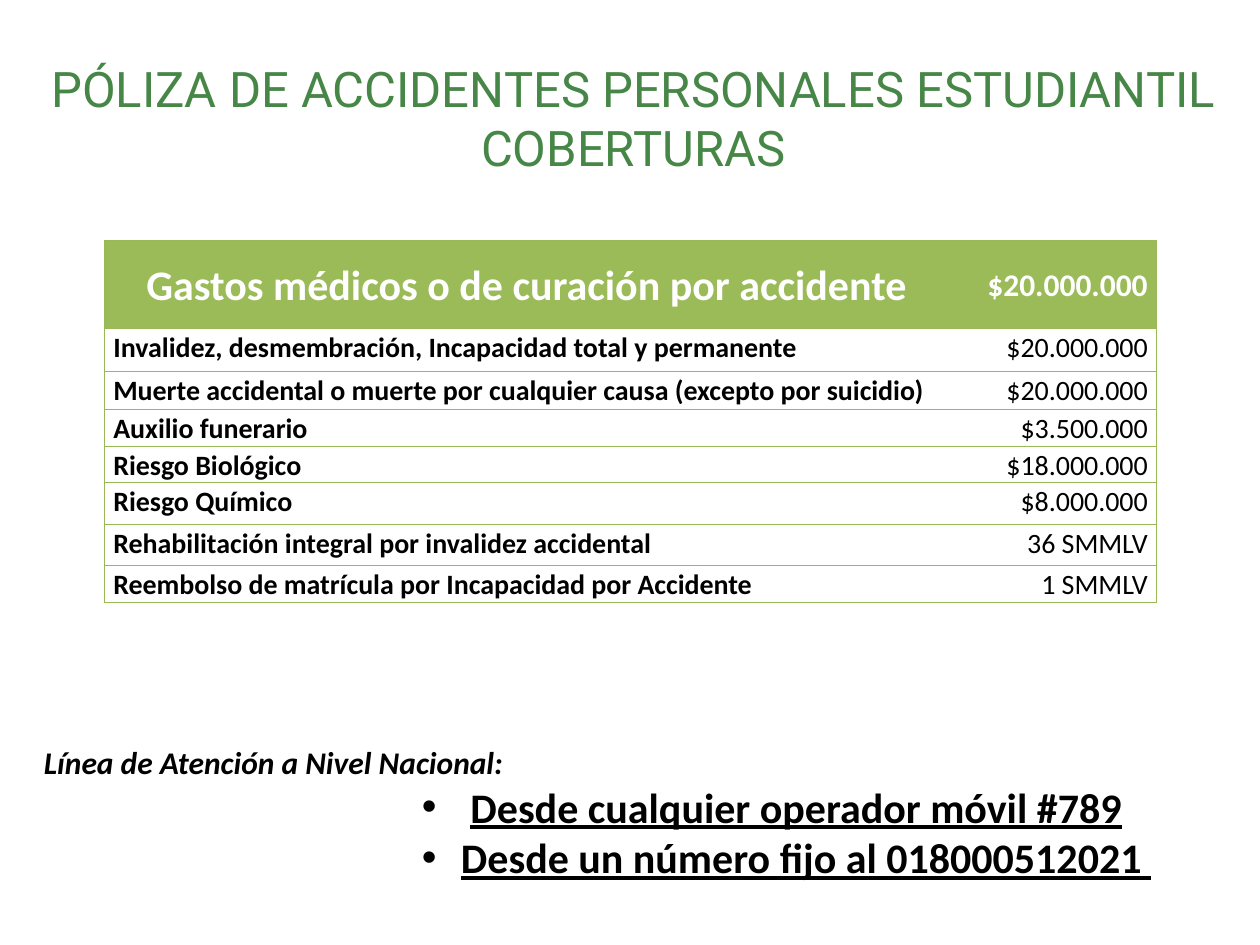
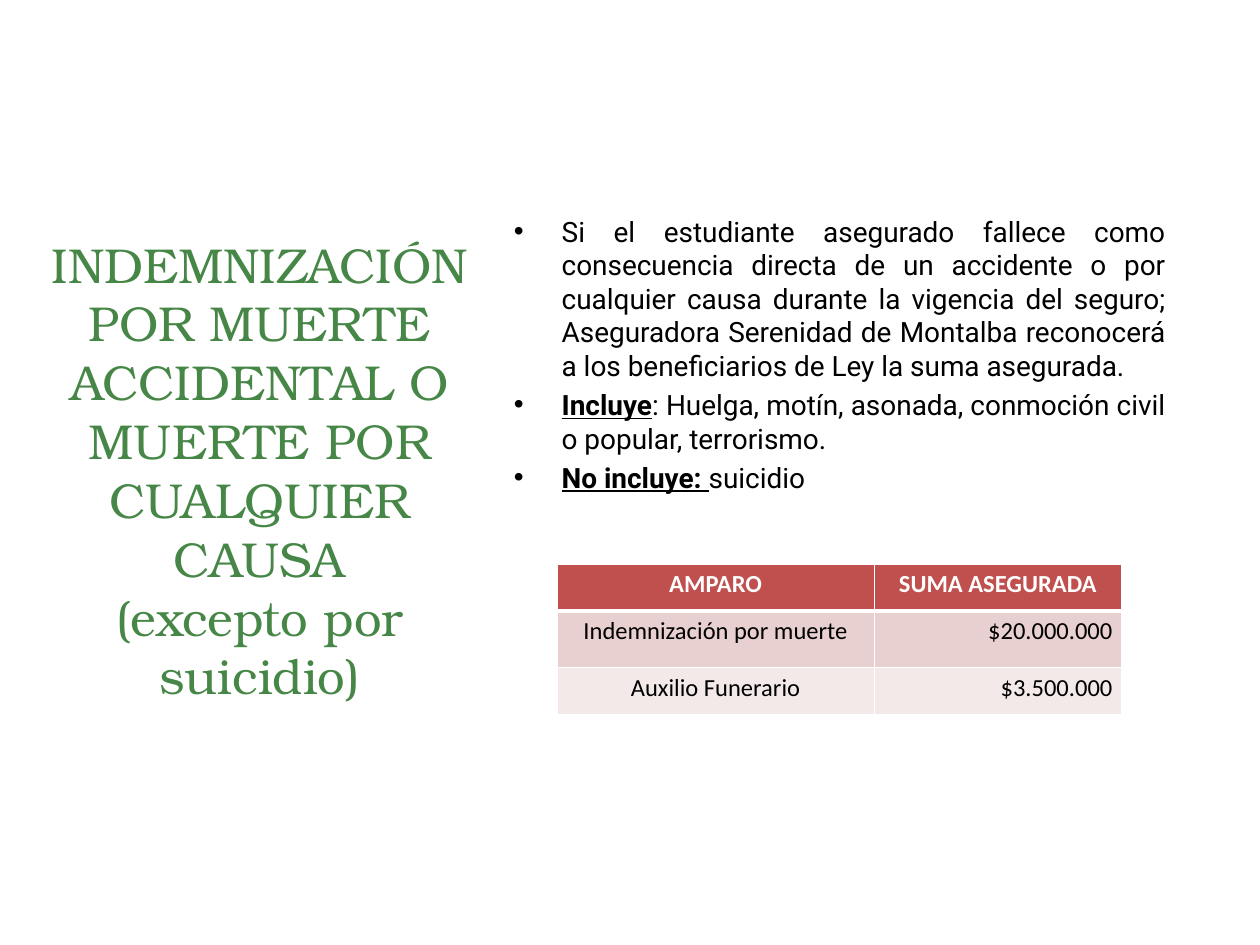
from dataclasses import dataclass, field
from typing import Optional

import lxml.etree
import pptx
import pptx.dml.color
import pptx.enum.text
import pptx.oxml.ns
import pptx.util

Inches = pptx.util.Inches
Pt = pptx.util.Pt
Align = pptx.enum.text.PP_ALIGN
Anchor = pptx.enum.text.MSO_ANCHOR


# Colours, fonts and type sizes
@dataclass(frozen=True)
class Theme:
    title: str = "468646"
    ink: str = "000000"
    white: str = "FFFFFF"
    green: str = "9BBB59"
    green_line: str = "98B955"
    red: str = "C0504D"
    red_bands: tuple[str, str] = ("E8D0D0", "F4E9E9")
    sans: str = "Roboto"
    serif: str = "TeX Gyre Bonum"
    table: str = "Calibri"
    title_size: int = 28
    large: int = 24
    medium: int = 18
    body: int = 16
    small: int = 14


THEME = Theme()


@dataclass(frozen=True)
class Box:
    left: float
    top: float
    width: float
    height: float

    def lengths(self) -> tuple:
        return tuple(Inches(n) for n in (self.left, self.top, self.width, self.height))


@dataclass(frozen=True)
class Border:
    color: str
    width: float


@dataclass(frozen=True)
class Cell:
    text: str
    size: int
    align: Align = Align.LEFT
    color: str = THEME.ink
    bold: bool = False
    fill: Optional[str] = None
    anchor: Anchor = Anchor.TOP
    spacing: float = 1.0
    margin: float = 0.0
    borders: dict[str, Border] = field(default_factory=dict)


# Text
def add_text(paragraph, text: str, *, size: int, font: str, color: str = THEME.ink,
             bold: bool = False, italic: bool = False, underline: bool = False) -> None:
    for index, line in enumerate(text.split("\n")):
        if index:
            paragraph.add_line_break()
        run = paragraph.add_run()
        run.text = line
        run.font.size = Pt(size)
        run.font.name = font
        run.font.bold = bold
        run.font.italic = italic
        run.font.underline = underline
        run.font.color.rgb = pptx.dml.color.RGBColor.from_string(color)


def add_bullet(paragraph, margin: float, hanging: float) -> None:
    properties = paragraph._p.get_or_add_pPr()
    properties.set("marL", str(Inches(margin)))
    properties.set("indent", str(-Inches(hanging)))
    for tag, name, value in (("a:buFont", "typeface", "Arial"), ("a:buChar", "char", "•")):
        element = lxml.etree.SubElement(properties, pptx.oxml.ns.qn(tag))
        element.set(name, value)


def add_text_frame(slide, box: Box):
    frame = slide.shapes.add_textbox(*box.lengths()).text_frame
    frame.word_wrap = True
    return frame


def add_titled_slide(presentation, text: str, box: Box, font: str):
    slide = presentation.slides.add_slide(presentation.slide_layouts[5])
    title = slide.shapes.title
    title.left, title.top, title.width, title.height = box.lengths()
    frame = title.text_frame
    frame.word_wrap = True
    frame.auto_size = pptx.enum.text.MSO_AUTO_SIZE.NONE
    frame.vertical_anchor = Anchor.MIDDLE
    paragraph = frame.paragraphs[0]
    paragraph.alignment = Align.CENTER
    add_text(paragraph, text, size=THEME.title_size, font=font, color=THEME.title)
    return slide


# Tables
def set_borders(cell, borders: dict[str, Border]) -> None:
    properties = cell._tc.get_or_add_tcPr()
    for index, side in enumerate("LRTB"):
        line = lxml.etree.Element(pptx.oxml.ns.qn(f"a:ln{side}"))
        border = borders.get(side)
        if border:
            line.set("w", str(Pt(border.width)))
            fill = lxml.etree.SubElement(line, pptx.oxml.ns.qn("a:solidFill"))
            color = lxml.etree.SubElement(fill, pptx.oxml.ns.qn("a:srgbClr"))
            color.set("val", border.color)
        else:
            lxml.etree.SubElement(line, pptx.oxml.ns.qn("a:noFill"))
        properties.insert(index, line)


def fill_cell(target, cell: Cell) -> None:
    target.margin_left = target.margin_right = Inches(0.07)
    target.margin_top = target.margin_bottom = Inches(cell.margin)
    target.vertical_anchor = cell.anchor
    if cell.fill:
        target.fill.solid()
        target.fill.fore_color.rgb = pptx.dml.color.RGBColor.from_string(cell.fill)
    else:
        target.fill.background()
    set_borders(target, cell.borders)
    paragraph = target.text_frame.paragraphs[0]
    paragraph.alignment = cell.align
    paragraph.line_spacing = cell.spacing
    add_text(paragraph, cell.text, size=cell.size, font=THEME.table,
             color=cell.color, bold=cell.bold)


def add_table(slide, box: Box, columns: list[float], heights: list[float],
              rows: list[list[Cell]]) -> None:
    table = slide.shapes.add_table(len(rows), len(columns), *box.lengths()).table
    for column, width in zip(table.columns, columns):
        column.width = Inches(width)
    for row, height, cells in zip(table.rows, heights, rows):
        row.height = Inches(height)
        for target, cell in zip(row.cells, cells):
            fill_cell(target, cell)


# Slide 1: coverages and helpline
COVERAGES = [
    ("Gastos médicos o de curación por accidente", "$20.000.000"),
    ("Invalidez, desmembración, Incapacidad total y permanente", "$20.000.000"),
    ("Muerte accidental o muerte por cualquier causa (excepto por suicidio)", "$20.000.000"),
    ("Auxilio funerario", "$3.500.000"),
    ("Riesgo Biológico", "$18.000.000"),
    ("Riesgo Químico", "$8.000.000"),
    ("Rehabilitación integral por invalidez accidental", "36 SMMLV"),
    ("Reembolso de matrícula por Incapacidad por Accidente", "1 SMMLV"),
]


def coverage_row(index: int, name: str, amount: str) -> list[Cell]:
    header = index == 0
    line = Border(THEME.green_line, 0.75)
    shared = dict(spacing=1.07, color=THEME.white if header else THEME.ink,
                  fill=THEME.green if header else None,
                  anchor=Anchor.MIDDLE if header else Anchor.TOP)
    return [
        Cell(name, THEME.large if header else THEME.body,
             Align.CENTER if header else Align.LEFT, bold=True,
             borders=dict.fromkeys("LTB", line), **shared),
        Cell(amount, THEME.medium if header else THEME.body, Align.RIGHT, bold=header,
             borders=dict.fromkeys("RTB", line), **shared),
    ]


def build_coverages(presentation) -> None:
    slide = add_titled_slide(
        presentation, "PÓLIZA DE ACCIDENTES PERSONALES ESTUDIANTIL\nCOBERTURAS",
        Box(0.25, 0.4, 9.55, 1.06), THEME.sans)
    add_table(slide, Box(0.83, 1.91, 8.35, 2.87), [6.7, 1.65],
              [0.7, 0.34, 0.3, 0.24, 0.25, 0.33, 0.33, 0.29],
              [coverage_row(index, *row) for index, row in enumerate(COVERAGES)])

    frame = add_text_frame(slide, Box(0.25, 5.85, 9.09, 1.21))
    add_text(frame.paragraphs[0], "Línea de Atención a Nivel Nacional:",
             size=THEME.medium, font=THEME.table, bold=True, italic=True)
    for lead, number in ((" ", "Desde cualquier operador móvil #789"),
                         ("", "Desde un número fijo al 018000512021 ")):
        paragraph = frame.add_paragraph()
        add_bullet(paragraph, 3.31, 0.31)
        if lead:
            add_text(paragraph, lead, size=THEME.large, font=THEME.table)
        add_text(paragraph, number, size=THEME.large, font=THEME.table,
                 bold=True, underline=True)


# Slide 2: death benefit
CONDITIONS = [
    ("", "Si el estudiante asegurado fallece como consecuencia directa de un accidente o por "
         "cualquier causa durante la vigencia del seguro; Aseguradora Serenidad de Montalba "
         "reconocerá a los beneficiarios de Ley la suma asegurada."),
    ("Incluye", ": Huelga, motín, asonada, conmoción civil o popular, terrorismo."),
    ("No incluye: ", "suicidio"),
]
BENEFITS = [
    ("AMPARO", "SUMA ASEGURADA"),
    ("Indemnización por muerte", "$20.000.000"),
    ("Auxilio Funerario", "$3.500.000"),
]


def benefit_row(index: int, name: str, amount: str) -> list[Cell]:
    header = index == 0
    borders = dict.fromkeys("LRTB", Border(THEME.white, 1))
    if header:
        borders["B"] = Border(THEME.white, 3)
    elif index == 1:
        borders["T"] = Border(THEME.white, 3)
    shared = dict(size=THEME.small, margin=0.04, bold=header, borders=borders,
                  color=THEME.white if header else THEME.ink,
                  fill=THEME.red if header else THEME.red_bands[index - 1])
    return [Cell(name, align=Align.CENTER, **shared),
            Cell(amount, align=Align.CENTER if header else Align.RIGHT, **shared)]


def build_death_benefit(presentation) -> None:
    slide = add_titled_slide(
        presentation,
        "INDEMNIZACIÓN POR MUERTE ACCIDENTAL O MUERTE POR CUALQUIER CAUSA\n"
        "(excepto por suicidio)",
        Box(0.28, 1.79, 3.56, 3.87), THEME.serif)

    frame = add_text_frame(slide, Box(3.98, 1.65, 5.37, 2.33))
    for index, (label, text) in enumerate(CONDITIONS):
        paragraph = frame.add_paragraph() if index else frame.paragraphs[0]
        paragraph.alignment = Align.JUSTIFY
        if index:
            paragraph.space_before = Pt(0.2 * THEME.body)
        add_bullet(paragraph, 0.38, 0.38)
        if label:
            add_text(paragraph, label, size=THEME.body, font=THEME.sans,
                     bold=True, underline=True)
        add_text(paragraph, text, size=THEME.body, font=THEME.sans)

    add_table(slide, Box(4.42, 4.48, 4.48, 1.19), [2.52, 1.96], [0.37, 0.45, 0.37],
              [benefit_row(index, *row) for index, row in enumerate(BENEFITS)])


def main() -> None:
    presentation = pptx.Presentation()
    presentation.slide_width = Inches(10)
    presentation.slide_height = Inches(7.5)
    build_coverages(presentation)
    build_death_benefit(presentation)
    presentation.save("out.pptx")


if __name__ == "__main__":
    main()
